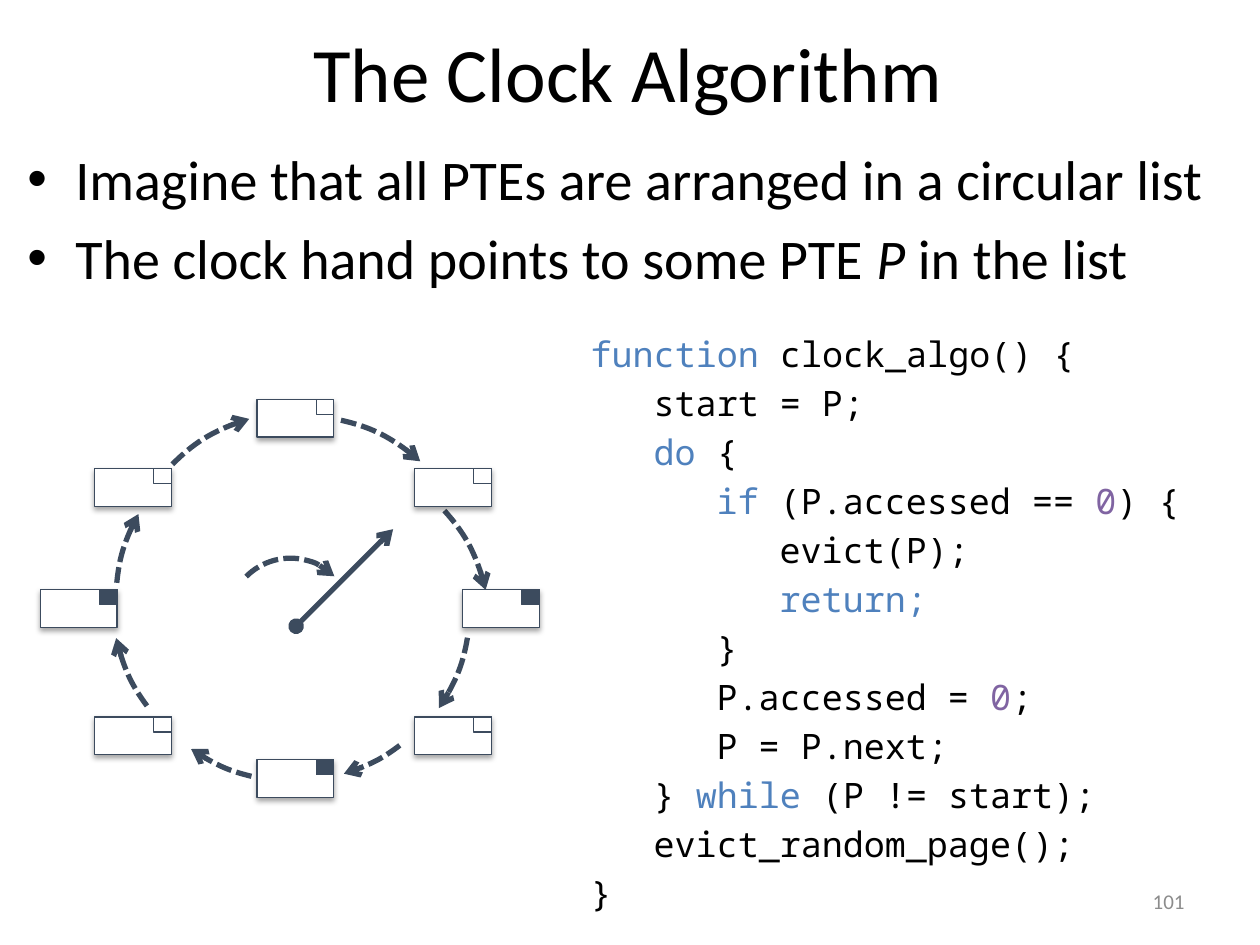
"""Build a slide that explains the clock page-replacement algorithm."""
from lxml import etree
from pptx import Presentation
from pptx import util as u
from pptx.dml.color import RGBColor
from pptx.enum import dml, shapes, text
from pptx.oxml.ns import qn

COLORS = {"black": "000000", "white": "FFFFFF", "gray": "8C8C8C",
          "slate": "3C4B5E", "keyword": "4F81BD", "number": "8064A2"}
COLUMNS, ROWS = 1000, 750
CELL = u.Inches(10) // COLUMNS

TITLE = [["The Clock Algorithm"]]
BULLETS = [
    ["Imagine that all PTEs are arranged in a circular list"],
    ["The clock hand points to some PTE ", ("P ", "italic"), "in the list"],
]
CODE = [
    [("function ", "keyword"), "clock_algo() {"],
    ["\tstart = P;"],
    ["\t", ("do", "keyword"), " {"],
    ["\t\t", ("if", "keyword"), " (P.accessed == ", ("0", "number"), ") {"],
    ["\t\t\tevict(P);"],
    ["\t\t\t", ("return;", "keyword")],
    ["\t\t}"],
    ["\t\tP.accessed = ", ("0", "number"), ";"],
    ["\t\tP = P.next;"],
    ["\t} ", ("while", "keyword"), " (P != start);"],
    ["\tevict_random_page();"],
    ["}"],
]
PAGE_NUMBER = [["101"]]

PAGE_SIZE, BIT_SIZE = (61, 30), (14, 12)
PAGES = [
    (204, 317, False), (329, 372, False), (367, 468, True), (329, 569, False),
    (204, 603, True), (75, 569, False), (32, 468, True), (75, 372, False),
]
RING, DIAL = 281, 99
ARCS = [
    (89, 336, RING, 228.5, 164.96, 179.53),
    (96, 327, RING, 314.8, 162, 179.53),
    (92, 339, RING, 142.9, 162, 174.24),
    (92, 339, RING, 185.9, 166.6, 179.53),
    (92, 336, RING, 270, 165.43, 179.53),
    (92, 342, RING, 99.7, 162, 176.84),
    (99, 330, RING, 12.8, 162, 179.53),
    (108, 359, RING, 47.9, 162, 179.53),
    (181, 443, DIAL, 314.8, 162, 0),
]
HAND = (235, 497, 312, 420)


def cells(*counts):
    return [CELL * count for count in counts]


def color(name):
    return RGBColor.from_string(COLORS[name])


def add_node(parent, tag, **attributes):
    return etree.SubElement(parent, qn(tag), attributes)


def add_text(slide, box, paragraphs, font="Calibri", size=20, ink="black",
             align=text.PP_ALIGN.LEFT, anchor=text.MSO_ANCHOR.TOP,
             space=None, bullet=None, tab=None):
    frame = slide.shapes.add_textbox(*cells(*box)).text_frame
    frame.word_wrap = True
    frame.vertical_anchor = anchor
    for index, runs in enumerate(paragraphs):
        paragraph = frame.add_paragraph() if index else frame.paragraphs[0]
        paragraph.alignment = align
        properties = paragraph._p.get_or_add_pPr()
        if space:
            before = add_node(properties, "a:spcBef")
            add_node(before, "a:spcPct", val=str(space * 1000))
        if bullet:
            indent = CELL * 38
            properties.set("marL", str(indent))
            properties.set("indent", str(-indent))
            add_node(properties, "a:buFont", typeface="Arial")
            add_node(properties, "a:buChar", char=bullet)
        if tab:
            stops = add_node(properties, "a:tabLst")
            for stop in range(1, 4):
                add_node(stops, "a:tab", pos=str(CELL * tab * stop), algn="l")
        for part in runs:
            words, style = (part, ink) if isinstance(part, str) else part
            run = paragraph.add_run()
            run.text = words
            run.font.name = font
            run.font.size = u.Pt(size)
            run.font.italic = style == "italic"
            run.font.color.rgb = color(style if style in COLORS else ink)


def style_stroke(shape, width, dashed=False, head=None, tail=None):
    shape.line.color.rgb = color("slate")
    shape.line.width = u.Pt(width)
    if dashed:
        shape.line.dash_style = dml.MSO_LINE.SQUARE_DOT
    stroke = shape.line._get_or_add_ln()
    for tag, kind in (("a:headEnd", head), ("a:tailEnd", tail)):
        if kind:
            add_node(stroke, tag, type=kind)


def add_box(group, left, top, size, fill, shadow=False):
    box = group.add_shape(shapes.MSO_SHAPE.RECTANGLE, *cells(left, top, *size))
    box.fill.solid()
    box.fill.fore_color.rgb = color(fill)
    style_stroke(box, 0.75)
    box.shadow.inherit = False
    if shadow:
        effects = box._element.spPr.find(qn("a:effectLst"))
        outer = add_node(effects, "a:outerShdw", blurRad=str(u.Pt(3.1)),
                         dist=str(u.Pt(1.8)), dir="5400000", rotWithShape="0")
        shade = add_node(outer, "a:srgbClr", val=COLORS["black"])
        add_node(shade, "a:alpha", val="35000")


def add_page(group, left, top, accessed):
    add_box(group, left, top, PAGE_SIZE, "white", shadow=True)
    bit_left = left + PAGE_SIZE[0] - BIT_SIZE[0]
    add_box(group, bit_left, top, BIT_SIZE, "slate" if accessed else "white")


def add_arc(group, left, top, size, rotation, start, end):
    arc = group.add_shape(shapes.MSO_SHAPE.ARC, *cells(left, top, size, size))
    arc.rotation = rotation
    arc.adjustments[0] = start
    arc.adjustments[1] = end
    arc.fill.background()
    style_stroke(arc, 3, dashed=True, tail="arrow")
    arc.shadow.inherit = False


def add_hand(group):
    hand = group.add_connector(shapes.MSO_CONNECTOR.STRAIGHT, *cells(*HAND))
    style_stroke(hand, 3, head="oval", tail="arrow")
    add_node(hand._element.spPr, "a:effectLst")


def main():
    presentation = Presentation()
    presentation.slide_width, presentation.slide_height = cells(COLUMNS, ROWS)
    slide = presentation.slides.add_slide(presentation.slide_layouts[6])
    middle = text.MSO_ANCHOR.MIDDLE
    add_text(slide, (5, 0, 987, 114), TITLE, size=44, anchor=middle,
             align=text.PP_ALIGN.CENTER)
    add_text(slide, (12, 110, 963, 149), BULLETS, size=32, space=20, bullet="•")
    add_text(slide, (717, 695, 233, 40), PAGE_NUMBER, size=12, ink="gray",
             anchor=middle, align=text.PP_ALIGN.RIGHT)
    clock = slide.shapes.add_group_shape().shapes
    for arc in ARCS:
        add_arc(clock, *arc)
    for page in PAGES:
        add_page(clock, *page)
    add_hand(clock)
    add_text(slide, (459, 259, 524, 483), CODE, font="Noto Sans Mono",
             space=20, tab=50)
    presentation.save("out.pptx")


if __name__ == "__main__":
    main()
